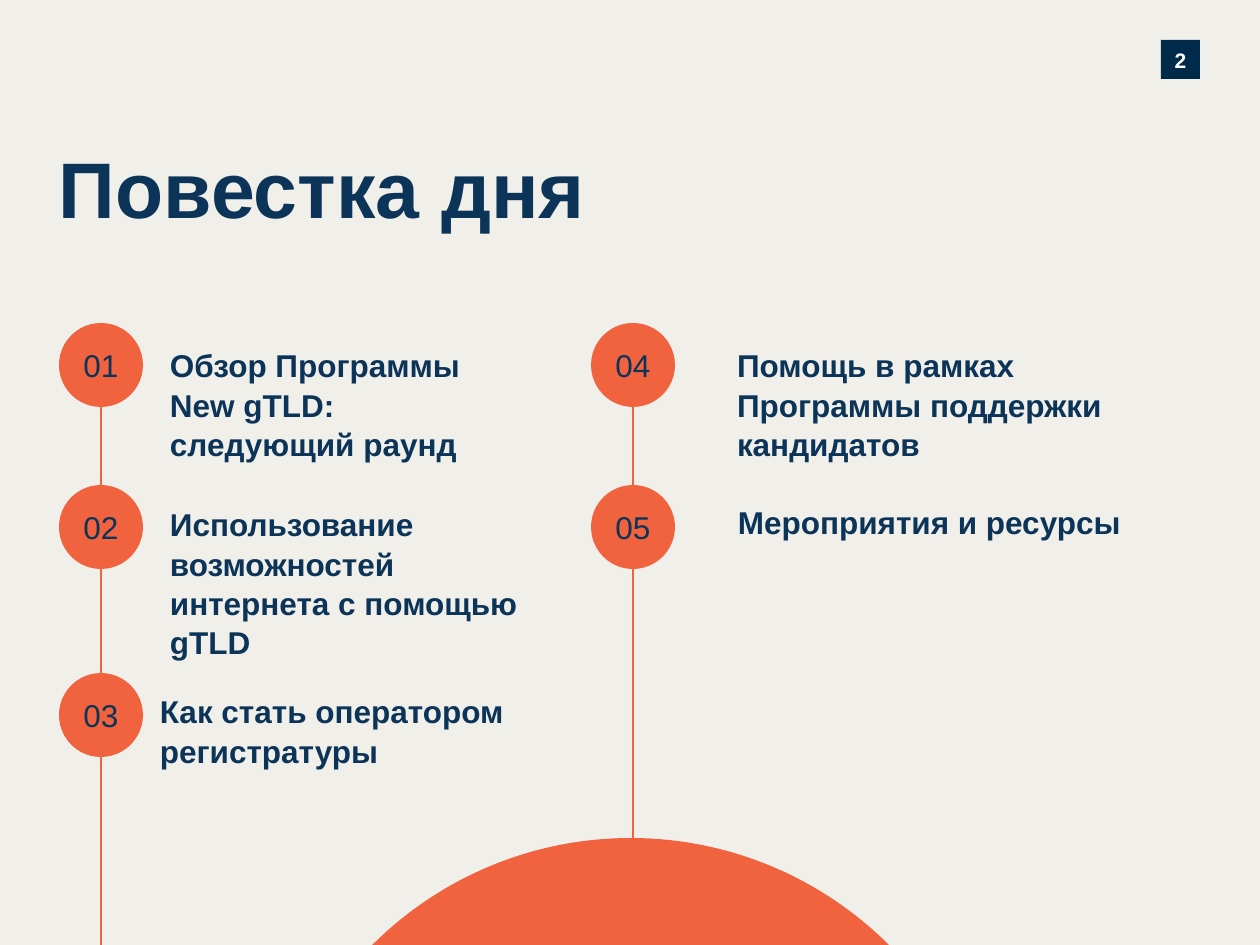
from lxml import etree
from pptx import Presentation
from pptx import util as u
from pptx.dml.color import RGBColor
from pptx.enum import shapes, text
from pptx.oxml.ns import qn

THEME = {
    "font": "Arial",
    "paper": "F1EFEA", "navy": "0B3458", "dark": "002A49",
    "coral": "F1633E", "white": "FFFFFF",
    "title": 45, "body": 18, "page": 12, "line": 1.25,
}

TITLE = "Повестка дня"
PAGE = "2"
# Number, dot (left, top), label, label box (left, top, width, height)
ITEMS = [
    ("01", (59, 323), "Обзор Программы\vNew gTLD:\vследующий раунд", (170, 345, 379, 152)),
    ("02", (59, 485), "Использование возможностей интернета с помощью gTLD", (170, 504, 367, 149)),
    ("03", (59, 673), "Как стать оператором регистратуры", (160, 691, 392, 115)),
    ("04", (591, 323), "Помощь в рамках Программы поддержки кандидатов", (737, 345, 386, 115)),
    ("05", (591, 485), "Мероприятия и ресурсы", (738, 502, 386, 77)),
]
DOT = 84
WIDE, HIGH = 1260, 945


def px(*nums):
    return [round(n * 914400 / 126) for n in nums]


def tint(name):
    return RGBColor.from_string(THEME[name])


def write(shape, words, size, color="navy", bold=True, align="LEFT", anchor="TOP", lead=1.0):
    frame = shape.text_frame
    look = {"margin_left": 0, "margin_right": 0, "margin_top": 0, "margin_bottom": 0,
            "word_wrap": True, "auto_size": text.MSO_AUTO_SIZE.NONE,
            "vertical_anchor": getattr(text.MSO_ANCHOR, anchor)}
    for key, val in look.items():
        setattr(frame, key, val)
    frame.text = words
    para = frame.paragraphs[0]
    para.alignment = getattr(text.PP_ALIGN, align)
    para.line_spacing = lead
    for run in para.runs:
        for key, val in {"name": THEME["font"], "size": u.Pt(THEME[size]), "bold": bold}.items():
            setattr(run.font, key, val)
        run.font.color.rgb = tint(color)


def block(slide, kind, box, color, adjust=()):
    """Add a flat preset shape without an outline."""
    shape = slide.shapes.add_shape(kind, *px(*box))
    shape.shadow.inherit = False
    shape.fill.solid()
    shape.fill.fore_color.rgb = tint(color)
    shape.line.fill.background()
    for i, val in enumerate(adjust):
        shape.adjustments[i] = val
    return shape


def rail(slide, left, top):
    """Run a line from a column's first dot to the slide's foot."""
    line = slide.shapes.add_connector(shapes.MSO_CONNECTOR.STRAIGHT, *px(left, top, left, HIGH))
    line.line.color.rgb = tint("coral")
    line.line.width = u.Pt(THEME["line"])
    etree.SubElement(line._element.spPr, qn("a:effectLst"))


def main():
    deck = Presentation()
    deck.slide_width, deck.slide_height = px(WIDE, HIGH)
    slide = deck.slides.add_slide(deck.slide_layouts[5])
    slide.background.fill.solid()
    slide.background.fill.fore_color.rgb = tint("paper")
    kind = shapes.MSO_SHAPE

    head = slide.shapes.title
    head.left, head.top, head.width, head.height = px(59, 132, 602, 110)
    write(head, TITLE, "title", anchor="MIDDLE")

    dome = block(slide, kind.CHORD, (265, 838, 731, 731), "coral", (53.75, 108.21))
    dome.rotation = 135
    badge = block(slide, kind.RECTANGLE, (1161, 40, 39, 39), "dark")
    write(badge, PAGE, "page", "white", align="CENTER", anchor="MIDDLE", lead=1.08)

    first = {}
    for _, (left, top), *_ in ITEMS:
        first.setdefault(left, top)
    for left, top in first.items():
        rail(slide, left + DOT / 2, top + DOT / 2)

    for num, spot, label, box in ITEMS:
        dot = block(slide, kind.ROUND_2_SAME_RECTANGLE, (*spot, DOT, DOT), "coral", (0.5, 0.5))
        write(dot, num, "body", bold=False, align="CENTER", anchor="MIDDLE")
        write(slide.shapes.add_textbox(*px(*box)), label, "body", lead=1.04)

    deck.save("out.pptx")


if __name__ == "__main__":
    main()
